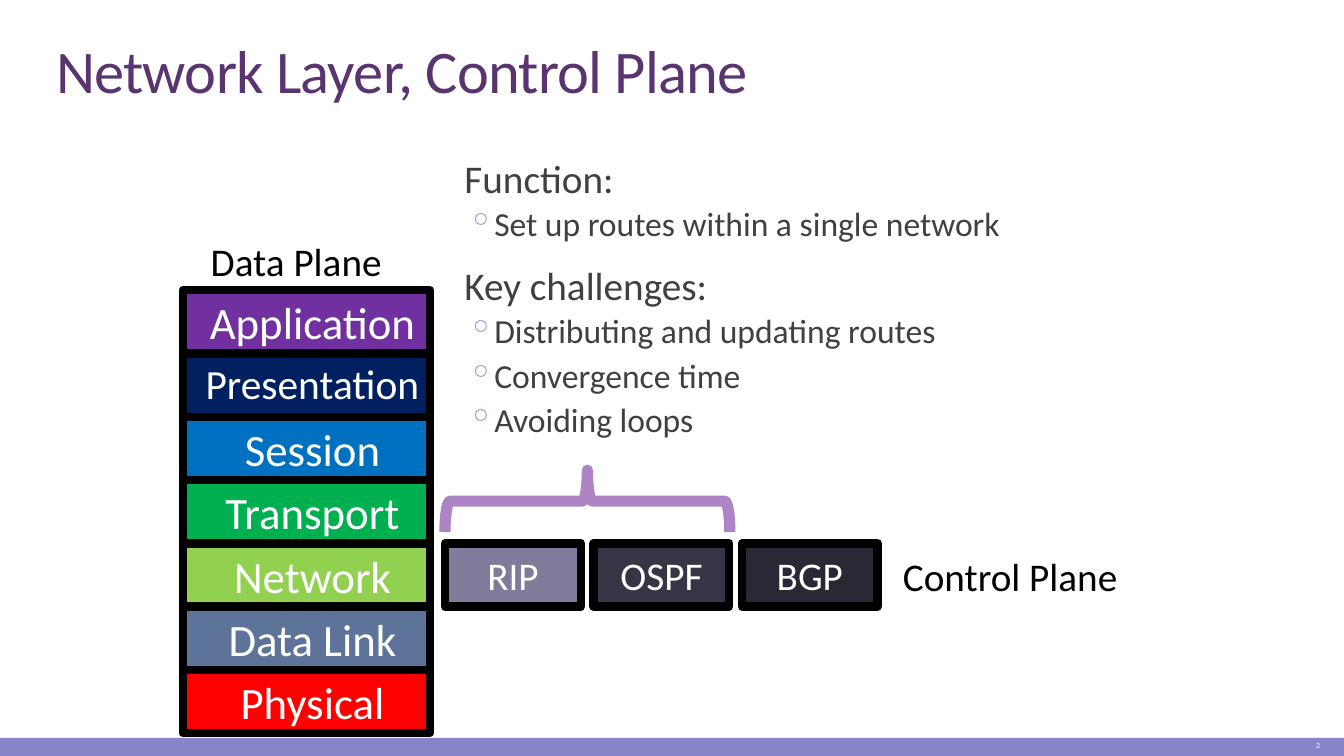
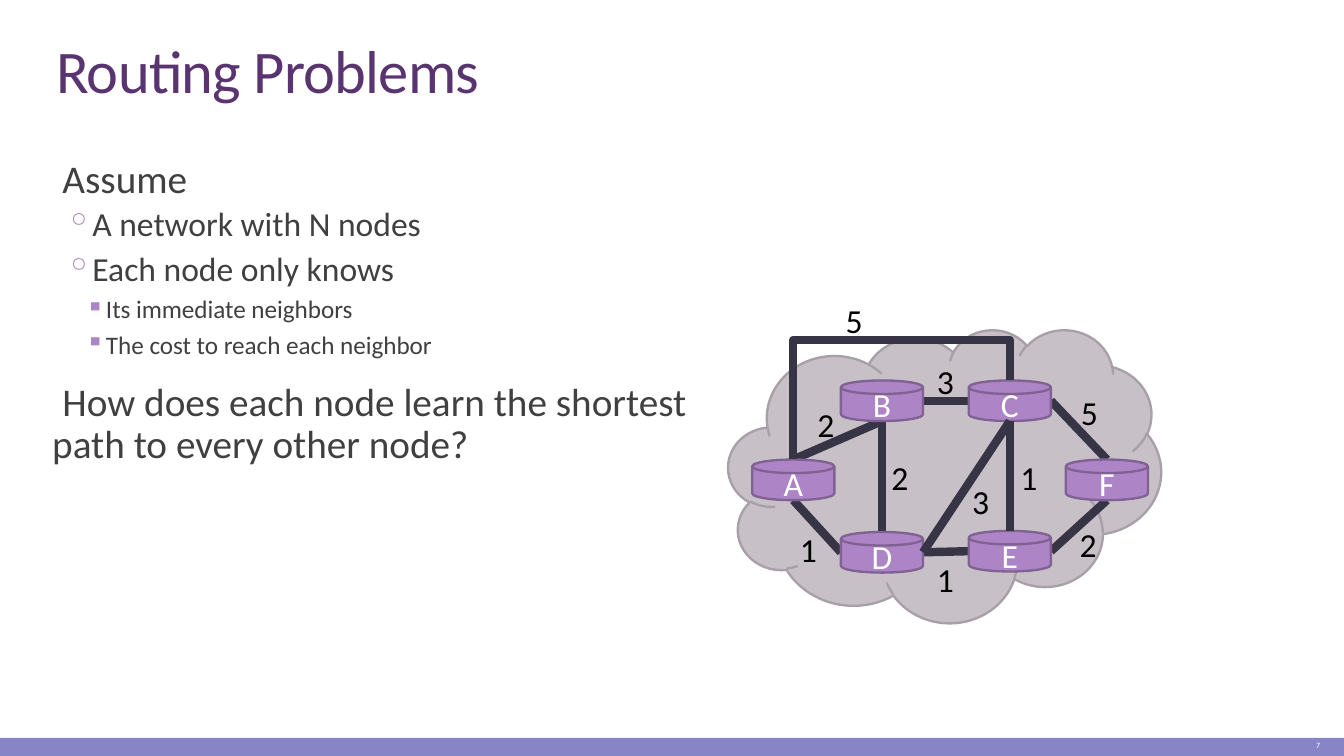
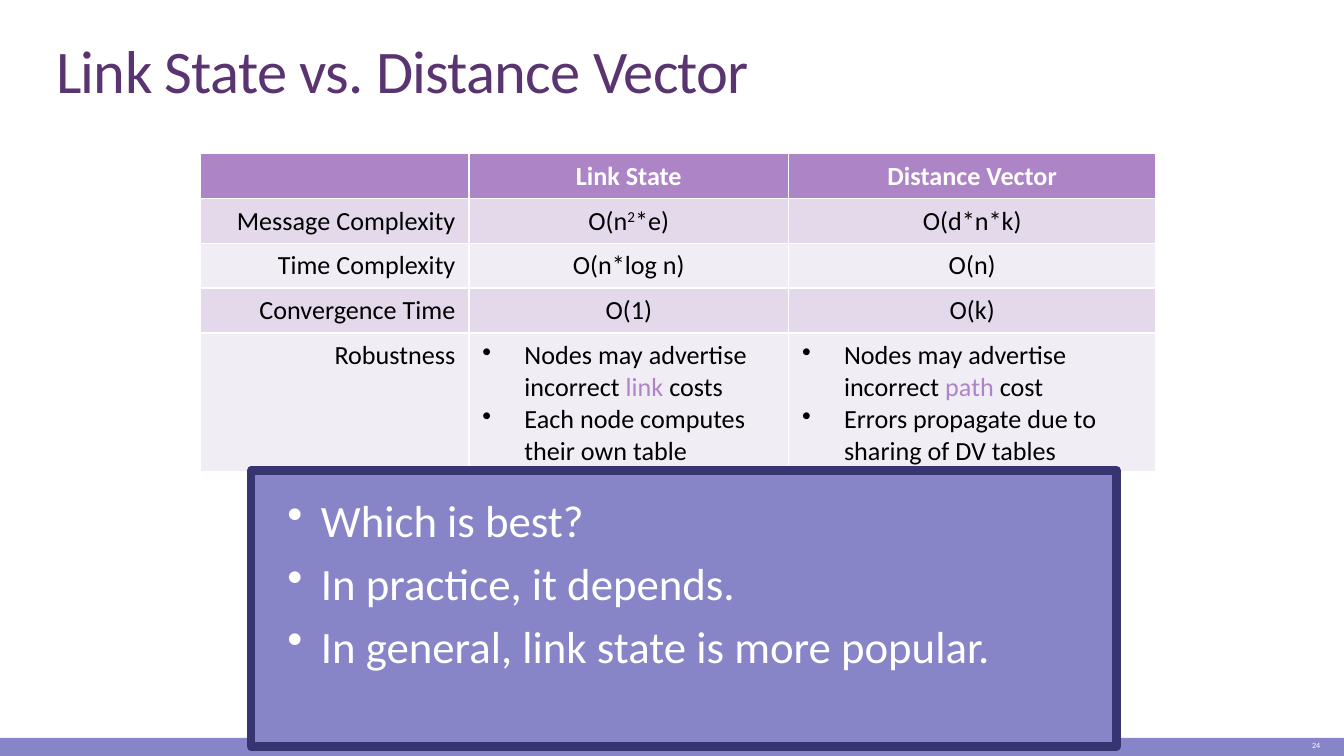
from lxml.etree import SubElement
from pptx import Presentation
from pptx.dml.color import RGBColor
from pptx.enum.shapes import MSO_CONNECTOR, MSO_SHAPE
from pptx.enum.text import MSO_ANCHOR, MSO_AUTO_SIZE, PP_ALIGN
from pptx.oxml.ns import qn
from pptx.util import Pt

# Colours and font
FONT = "Calibri"
WHITE = RGBColor(0xFF, 0xFF, 0xFF)
BLACK = RGBColor(0, 0, 0)
PLUM = RGBColor(0x5A, 0x34, 0x71)
GREY = RGBColor(0x40, 0x40, 0x40)
PERIWINKLE = RGBColor(0x87, 0x84, 0xC7)
NAVY = RGBColor(0x37, 0x34, 0x72)
LILAC = RGBColor(0xAD, 0x84, 0xC6)
LILAC_EDGE = RGBColor(0x80, 0x62, 0x92)
SLATE = RGBColor(0x37, 0x35, 0x45)
CLOUD = RGBColor(0xC7, 0xC1, 0xC7)
CLOUD_EDGE = RGBColor(0xA8, 0x9F, 0xA8)
ROW_DARK = RGBColor(0xE3, 0xD9, 0xEA)
ROW_LIGHT = RGBColor(0xF1, 0xED, 0xF5)

# Text formats
INSETS = (7.2, 3.6, 7.2, 3.6)
BODY_INSETS = (0, 3.6, 0, 3.6)
TIGHT_INSETS = (5.25, 2.63, 5.25, 2.63)
CENTRED = {"alignment": PP_ALIGN.CENTER}
RIGHT = {"alignment": PP_ALIGN.RIGHT}
TITLE = {"line_spacing": 0.85}
HEADING = {"line_spacing": 0.9, "space_before": Pt(9), "space_after": Pt(1.5)}
POINT = {"line_spacing": 0.9, "space_before": Pt(1.5), "space_after": Pt(3)}
LAYER = {"alignment": PP_ALIGN.CENTER, "space_before": Pt(4.8)}
VERDICT = {"space_before": Pt(4.8)}

# Outline levels: size, paragraph format, bullet (sign, colour, margin, indent)
LEVELS = [
    (21, HEADING, (" ", LILAC, 5, -5)),
    (18, POINT, ("◦", LILAC, 23, -10.8)),
    (13.5, POINT, ("▪", LILAC, 33.8, -10.8)),
]

# Slide 1 content
FUNCTION_OUTLINE = [
    (0, "Function:"),
    (1, "Set up routes within a single network"),
    (0, "Key challenges:"),
    (1, "Distributing and updating routes"),
    (1, "Convergence time"),
    (1, "Avoiding loops"),
]
LAYERS = [
    ("Application", RGBColor(0x70, 0x30, 0xA0), 24),
    ("Presentation", RGBColor(0x00, 0x20, 0x60), 22.2),
    ("Session", RGBColor(0x00, 0x70, 0xC0), 24),
    ("Transport", RGBColor(0x00, 0xB0, 0x50), 24),
    ("Network", RGBColor(0x92, 0xD0, 0x50), 24),
    ("Data Link", RGBColor(0x5D, 0x73, 0x9A), 24),
    ("Physical", RGBColor(0xFF, 0, 0), 24),
]
PROTOCOLS = [
    ("RIP", RGBColor(0x7F, 0x7B, 0x9A)),
    ("OSPF", SLATE),
    ("BGP", RGBColor(0x29, 0x28, 0x34)),
]
PLANES = [("Control Plane", (476.6, 292.3, 131, 32.4)), ("Data Plane", (105.8, 123.8, 106.6, 32.4))]

# Slide 2 content
ROUTING_OUTLINE = [
    (0, "Assume"),
    (1, "A network with N nodes"),
    (1, "Each node only knows"),
    (2, "Its immediate neighbors"),
    (2, "The cost to reach each neighbor"),
    (0, "How does each node learn the shortest path to every other node?"),
]
ROUTER_W, ROUTER_H = 44, 21.8
ROUTERS = {"A": (403, 246.2), "B": (450.5, 203.8), "C": (519, 203.8),
           "D": (450.5, 285), "E": (519, 284.4), "F": (571, 246.2)}
SIDES = {"top": (0.5, 0), "bottom": (0.5, 1), "left": (0, 0.5), "right": (1, 0.5)}
# Links: start, end, cost, left and top of the cost
LINKS_BEHIND = [
    ("F bottom", "E right", "2", 571, 277.2),
    ("C right", "F top", "5", 571.7, 206.6),
    ("B right", "C left", "3", 494.6, 190),
    ("E left", "D right", "1", 494.6, 296),
    ("A bottom", "D left", "1", 421.2, 280),
    ("A top", "B bottom", "2", 430.6, 213),
    ("D top", "B bottom", "2", 470.2, 241.2),
]
LINKS_IN_FRONT = [
    ("C bottom", "D right", "3", 513.4, 254.2),
    ("C bottom", "E top", "1", 539.3, 241.2),
]
DETOUR_RISE = 64.1
DETOUR_COST = ("5", 445.7, 157)

# Slide 3 content: a cell is a text, or a list of points made of (text, colour) runs
COLUMN_WIDTHS = [143.8, 171.2, 196.8]
ROW_HEIGHTS = [22.4] * 4 + [70]
COMPARISON = [
    ["", "Link State", "Distance Vector"],
    ["Message Complexity", "O(n^2^*e)", "O(d*n*k)"],
    ["Time Complexity", "O(n*log n)", "O(n)"],
    ["Convergence Time", "O(1)", "O(k)"],
    ["Robustness",
     [[("Nodes may advertise incorrect ", BLACK), ("link", LILAC), (" costs", BLACK)],
      [("Each node computes their own table", BLACK)]],
     [[("Nodes may advertise incorrect ", BLACK), ("path", LILAC), (" cost", BLACK)],
      [("Errors propagate due to sharing of DV tables", BLACK)]]],
]
VERDICTS = ["Which is best?", "In practice, it depends.", "In general, link state is more popular."]


def points(values):
    return [Pt(value) for value in values]


def set_all(target, values):
    for name, value in values.items():
        setattr(target, name, value)


def add_run(paragraph, words, size, colour, bold=False):
    run = paragraph.add_run()
    run.text = words
    set_all(run.font, {"name": FONT, "size": Pt(size), "bold": bold})
    run.font.color.rgb = colour
    return run


def add_bullet(paragraph, sign, colour, margin, indent):
    properties = paragraph._p.get_or_add_pPr()
    properties.set("marL", str(Pt(margin)))
    properties.set("indent", str(Pt(indent)))
    SubElement(SubElement(properties, qn("a:buClr")), qn("a:srgbClr"), val=str(colour))
    SubElement(properties, qn("a:buChar"), char=sign)


def next_paragraph(frame, index):
    return frame.add_paragraph() if index else frame.paragraphs[0]


def set_frame(frame, insets=INSETS, anchor=MSO_ANCHOR.TOP, wrap=True):
    sides = ("margin_left", "margin_top", "margin_right", "margin_bottom")
    set_all(frame, dict(zip(sides, points(insets))))
    set_all(frame, {"vertical_anchor": anchor, "word_wrap": wrap})
    if not wrap:
        frame.auto_size = MSO_AUTO_SIZE.SHAPE_TO_FIT_TEXT


def write_line(frame, words, size, colour, layout):
    paragraph = frame.paragraphs[0]
    set_all(paragraph, layout)
    return add_run(paragraph, words, size, colour)


def add_text(slide, box, words, size, colour, layout, **frame_format):
    frame = slide.shapes.add_textbox(*points(box)).text_frame
    set_frame(frame, **frame_format)
    return write_line(frame, words, size, colour, layout)


def add_block(slide, kind, box, fill=None, edge=None, width=4.5):
    block = slide.shapes.add_shape(kind, *points(box))
    block.shadow.inherit = False
    for part, colour in ((block.fill, fill), (block.line.fill, edge)):
        if colour is None:
            part.background()
        else:
            part.solid()
            part.fore_color.rgb = colour
    if edge is not None:
        block.line.width = Pt(width)
    return block


def add_link(slide, kind, start, end):
    link = slide.shapes.add_connector(kind, *points(start + end))
    link.line.color.rgb = SLATE
    link.line.width = Pt(4.5)
    SubElement(link._element.spPr, qn("a:effectLst"))
    return link


def add_outline(slide, box, outline):
    frame = slide.shapes.add_textbox(*points(box)).text_frame
    set_frame(frame, BODY_INSETS)
    for index, (level, words) in enumerate(outline):
        size, layout, bullet = LEVELS[level]
        paragraph = next_paragraph(frame, index)
        set_all(paragraph, {"level": level, **layout})
        add_bullet(paragraph, *bullet)
        add_run(paragraph, words, size, GREY)


def start_slide(deck, title, number):
    """Blank slide with the band, title and page number that all slides share."""
    slide = deck.slides.add_slide(deck.slide_layouts[6])
    add_block(slide, MSO_SHAPE.RECTANGLE, (0, 395.3, 720, 9.7), PERIWINKLE)
    heading = add_text(slide, (23, 17.3, 682.6, 43.2), title, 32.4, PLUM, TITLE,
                       anchor=MSO_ANCHOR.BOTTOM)
    heading._r.get_or_add_rPr().set("spc", "-40")
    add_text(slide, (636.5, 393.1, 77.8, 12.2), number, 4.3, WHITE, RIGHT,
             anchor=MSO_ANCHOR.MIDDLE)
    return slide


def build_control_plane(deck):
    slide = start_slide(deck, "Network Layer, Control Plane", "2")
    add_outline(slide, (238.3, 82.1, 380.9, 283), FUNCTION_OUTLINE)

    # Layer stack
    step, top = 33.9, 155.5
    for index, (layer, colour, size) in enumerate(LAYERS):
        block = add_block(slide, MSO_SHAPE.RECTANGLE, (97.9, top + index * step, 132.5, step),
                          colour, BLACK)
        set_frame(block.text_frame, TIGHT_INSETS)
        write_line(block.text_frame, layer, size, WHITE, LAYER)
        block.text_frame.paragraphs[0]._p.get_or_add_pPr().set("marL", str(Pt(6.5)))

    # Brace over the protocols inside one network
    brace = add_block(slide, MSO_SHAPE.LEFT_BRACE, (298.1, 192.2, 33.1, 152.6), None, LILAC, 6)
    brace.rotation = 90
    brace.adjustments[0] = 0.083

    # Protocols beside the network layer
    for index, (protocol, colour) in enumerate(PROTOCOLS):
        block = add_block(slide, MSO_SHAPE.RECTANGLE,
                          (238.5 + index * 79.5, top + 4 * step, 72.7, step), colour, BLACK)
        set_frame(block.text_frame, anchor=MSO_ANCHOR.MIDDLE)
        write_line(block.text_frame, protocol, 21, WHITE, CENTRED)

    for plane, box in PLANES:
        add_text(slide, box, plane, 21, BLACK, {}, wrap=False)


def router_point(place):
    name, side = place.split()
    (left, top), (across, down) = ROUTERS[name], SIDES[side]
    return left + across * ROUTER_W, top + down * ROUTER_H


def add_straight_links(slide, links):
    for start, end, *_ in links:
        add_link(slide, MSO_CONNECTOR.STRAIGHT, router_point(start), router_point(end))


def add_detour(slide, start, end):
    """Bent link that rises above both routers: an elbow turned a quarter."""
    (x1, y1), (x2, y2) = start, end
    middle_x, middle_y = (x1 + x2) / 2, (y1 + y2) / 2
    half_w, half_h = (y1 - y2) / 2, (x2 - x1) / 2
    detour = add_link(slide, MSO_CONNECTOR.ELBOW, (middle_x + half_w, middle_y + half_h),
                      (middle_x - half_w, middle_y - half_h))
    shape_properties = detour._element.spPr
    shape_properties.find(qn("a:xfrm")).set("rot", "5400000")
    guides = shape_properties.find(qn("a:prstGeom")).get_or_add_avLst()
    bend = round(DETOUR_RISE / (y1 - y2) * 100000)
    SubElement(guides, qn("a:gd"), name="adj1", fmla=f"val {bend}")


def build_routing(deck):
    slide = start_slide(deck, "Routing Problems", "7")
    add_outline(slide, (23, 82.1, 365.8, 283), ROUTING_OUTLINE)
    add_block(slide, MSO_SHAPE.CLOUD, (390.2, 176.4, 231.8, 157), CLOUD, CLOUD_EDGE, 1.25)

    # Network
    add_straight_links(slide, LINKS_BEHIND)
    for router, (left, top) in ROUTERS.items():
        disk = add_block(slide, MSO_SHAPE.FLOWCHART_MAGNETIC_DISK,
                         (left, top, ROUTER_W, ROUTER_H), LILAC, LILAC_EDGE, 1.25)
        set_frame(disk.text_frame, anchor=MSO_ANCHOR.MIDDLE)
        write_line(disk.text_frame, router, 18, WHITE, CENTRED)
    add_straight_links(slide, LINKS_IN_FRONT)
    add_detour(slide, router_point("A top"), router_point("C top"))

    # Link costs
    costs = [link[2:] for link in LINKS_BEHIND + LINKS_IN_FRONT]
    for cost, left, top in costs + [DETOUR_COST]:
        add_text(slide, (left, top, 23.8, 28.8), cost, 18, BLACK, CENTRED, wrap=False)


def fill_cell(cell, content, row, column):
    header = row == 0
    cell.fill.solid()
    cell.fill.fore_color.rgb = LILAC if header else (ROW_LIGHT, ROW_DARK)[row % 2]
    set_frame(cell.text_frame, TIGHT_INSETS)
    if isinstance(content, list):
        for index, runs in enumerate(content):
            paragraph = next_paragraph(cell.text_frame, index)
            add_bullet(paragraph, "•", BLACK, 22.5, -22.5)
            for words, colour in runs:
                add_run(paragraph, words, 14, colour)
        return
    paragraph = cell.text_frame.paragraphs[0]
    set_all(paragraph, CENTRED if column or header else RIGHT)
    if not content:
        SubElement(paragraph._p, qn("a:endParaRPr"), sz="1400")
        return
    # Text between carets is raised
    for index, words in enumerate(content.split("^")):
        run = add_run(paragraph, words, 14, WHITE if header else BLACK, header)
        if index % 2:
            run._r.get_or_add_rPr().set("baseline", "30000")


def build_comparison(deck):
    slide = start_slide(deck, "Link State vs. Distance Vector", "24")

    # Comparison table
    box = (107.5, 82.3, sum(COLUMN_WIDTHS), sum(ROW_HEIGHTS))
    table = slide.shapes.add_table(len(ROW_HEIGHTS), len(COLUMN_WIDTHS), *points(box)).table
    for column, width in zip(table.columns, COLUMN_WIDTHS):
        column.width = Pt(width)
    for row, height in zip(table.rows, ROW_HEIGHTS):
        row.height = Pt(height)
    for row, contents in enumerate(COMPARISON):
        for column, content in enumerate(contents):
            fill_cell(table.cell(row, column), content, row, column)

    # Verdict panel
    add_block(slide, MSO_SHAPE.RECTANGLE, (134.6, 252, 463.7, 148), PERIWINKLE, NAVY)
    frame = slide.shapes.add_textbox(*points((139.7, 261.4, 455, 132.5))).text_frame
    set_frame(frame, TIGHT_INSETS)
    for index, verdict in enumerate(VERDICTS):
        paragraph = next_paragraph(frame, index)
        set_all(paragraph, VERDICT)
        add_bullet(paragraph, "•", WHITE, 27, -18)
        add_run(paragraph, verdict, 24, WHITE)


def main():
    deck = Presentation()
    set_all(deck, {"slide_width": Pt(720), "slide_height": Pt(405)})
    build_control_plane(deck)
    build_routing(deck)
    build_comparison(deck)
    deck.save("out.pptx")


if __name__ == "__main__":
    main()
